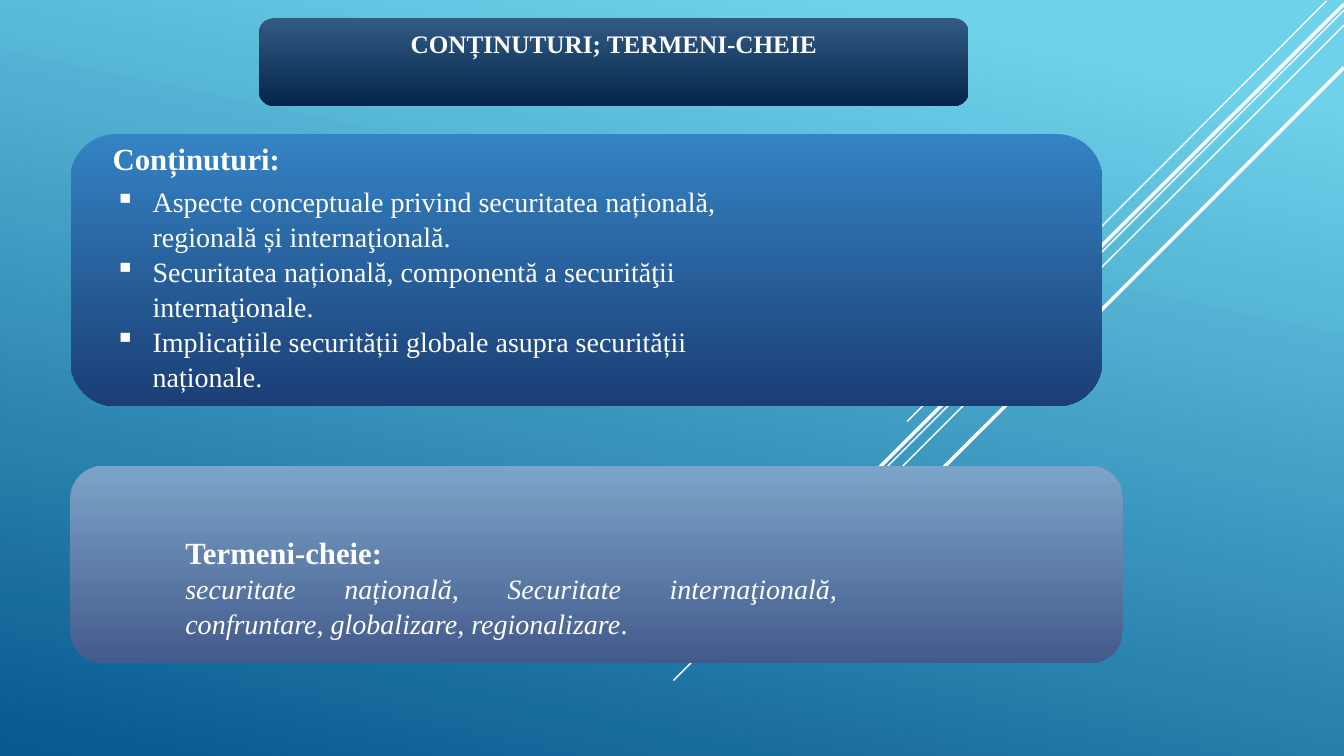
import pptx
import pptx.dml.color
import pptx.enum.shapes
import pptx.enum.text
import pptx.oxml
import pptx.oxml.ns
import pptx.util
from dataclasses import dataclass

Pt = pptx.util.Pt
ALIGN = pptx.enum.text.PP_ALIGN


@dataclass(frozen=True)
class Theme:
    font: str = "Times New Roman"
    white: str = "FFFFFF"
    background: tuple = ("6ED2EB", "06588E")
    banner: tuple = ("325B84", "04254B")
    contents: tuple = ("3483C3", "1B3E75")
    terms: tuple = ("7CA4C8", "435A8C")
    title_size: float = 18
    heading_size: float = 22
    body_size: float = 20
    line_spacing: float = 1.04
    bullet_indent: float = 27


THEME = Theme()

# Diagonal rays: start x, start y, end x, end y, width
RAYS = [
    (947.5, 0.7, 648, 301, 1),
    (960, 7.2, 481, 486, 1),
    (960, 18, 569.5, 408.2, 1),
    (960, 2.9, 577.4, 384.5, 2.5),
    (960, 48.2, 617.8, 390.2, 2.5),
]

CONTENTS = [
    "Aspecte conceptuale privind securitatea națională, regională și internaţională.",
    "Securitatea națională, componentă a securităţii internaţionale.",
    "Implicațiile securității globale asupra securității naționale.",
]
TERMS = "securitate națională, Securitate internaţională, confruntare, globalizare, regionalizare"


def color(code):
    return pptx.dml.color.RGBColor.from_string(code)


def fill_gradient(fill, colors, angle=270, first_stop=0):
    fill.gradient()
    fill.gradient_angle = angle
    for stop, code, position in zip(fill.gradient_stops, colors, (first_stop, 1)):
        stop.color.rgb = color(code)
        stop.position = position


def add_ray(slide, start_x, start_y, end_x, end_y, width):
    ray = slide.shapes.add_connector(
        pptx.enum.shapes.MSO_CONNECTOR.STRAIGHT,
        Pt(start_x), Pt(start_y), Pt(end_x), Pt(end_y))
    ray.line.color.rgb = color(THEME.white)
    ray.line.width = Pt(width)
    properties = ray._element.spPr
    properties.append(pptx.oxml.parse_xml(
        f'<a:effectLst {pptx.oxml.ns.nsdecls("a")}/>'))


def add_card(slide, left, top, width, height, colors):
    card = slide.shapes.add_shape(
        pptx.enum.shapes.MSO_SHAPE.ROUNDED_RECTANGLE,
        Pt(left), Pt(top), Pt(width), Pt(height))
    card.shadow.inherit = False
    card.line.fill.background()
    fill_gradient(card.fill, colors)
    frame = card.text_frame
    frame.word_wrap = True
    frame.vertical_anchor = pptx.enum.text.MSO_ANCHOR.TOP
    return frame


def add_text_box(slide, left, top, width, height, wrap=True):
    box = slide.shapes.add_textbox(Pt(left), Pt(top), Pt(width), Pt(height))
    box.text_frame.word_wrap = wrap
    return box.text_frame


def add_paragraph(frame, align=ALIGN.LEFT, bullet=None):
    paragraph = frame.paragraphs[0]
    if paragraph.runs:
        paragraph = frame.add_paragraph()
    paragraph.alignment = align
    paragraph.line_spacing = THEME.line_spacing
    if bullet:
        properties = paragraph._p.get_or_add_pPr()
        properties.set("marL", str(Pt(THEME.bullet_indent)))
        properties.set("indent", str(-Pt(THEME.bullet_indent)))
        properties.append(pptx.oxml.parse_xml(
            f'<a:buChar {pptx.oxml.ns.nsdecls("a")} char="{bullet}"/>'))
    return paragraph


def add_run(paragraph, text, size=THEME.body_size, bold=False, italic=False):
    run = paragraph.add_run()
    run.text = text
    run.font.name = THEME.font
    run.font.size = Pt(size)
    run.font.bold = bold
    run.font.italic = italic
    run.font.color.rgb = color(THEME.white)


def main():
    presentation = pptx.Presentation()
    presentation.slide_width = Pt(960)
    presentation.slide_height = Pt(540)
    slide = presentation.slides.add_slide(presentation.slide_layouts[6])

    # Background with rays
    fill_gradient(slide.background.fill, THEME.background, angle=258, first_stop=0.1)
    for ray in RAYS:
        add_ray(slide, *ray)

    # Title banner
    banner = add_card(slide, 185, 13, 507, 62.6, THEME.banner)
    add_run(add_paragraph(banner, align=ALIGN.CENTER), "CONȚINUTURI; TERMENI-CHEIE",
            size=THEME.title_size, bold=True)

    # Contents
    add_card(slide, 50.4, 95.8, 737, 194.4, THEME.contents)
    heading = add_text_box(slide, 73.4, 95, 135.4, 33.8, wrap=False)
    add_run(add_paragraph(heading, align=ALIGN.JUSTIFY), "Conținuturi:",
            size=THEME.heading_size, bold=True)
    contents = add_text_box(slide, 74.9, 127.4, 480, 152.6)
    for item in CONTENTS:
        add_run(add_paragraph(contents, bullet="▪"), item)

    # Key terms
    add_card(slide, 50.4, 332.6, 751.7, 141.1, THEME.terms)
    terms = add_text_box(slide, 125.3, 376.6, 480, 82)
    add_run(add_paragraph(terms, align=ALIGN.JUSTIFY), "Termeni-cheie:",
            size=THEME.heading_size, bold=True)
    term_list = add_paragraph(terms, align=ALIGN.JUSTIFY)
    add_run(term_list, TERMS, italic=True)
    add_run(term_list, ".")

    presentation.save("out.pptx")


if __name__ == "__main__":
    main()
